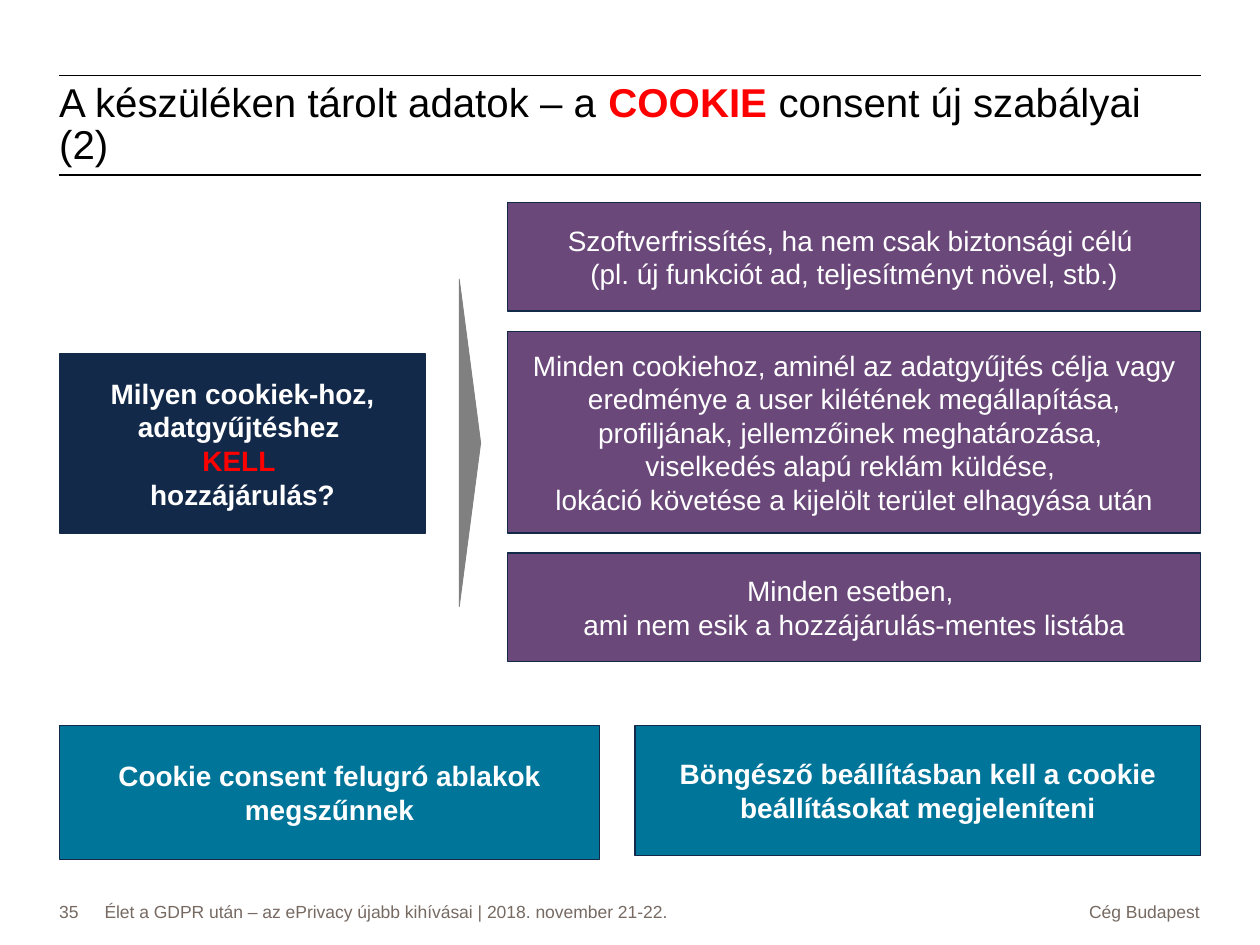
from dataclasses import dataclass

from lxml.etree import SubElement
from pptx import Presentation
from pptx.dml.color import RGBColor as Rgb
from pptx.enum.shapes import MSO_CONNECTOR as Conn, MSO_SHAPE as Shape
from pptx.enum.text import MSO_ANCHOR as Anchor, PP_ALIGN as Align
from pptx.oxml.ns import qn
from pptx.util import Inches, Pt


@dataclass(frozen=True)
class Theme:
    font: str = "Arial"
    black: str = "000000"
    white: str = "FFFFFF"
    red: str = "FF0000"
    navy: str = "13294A"
    plum: str = "6B487A"
    teal: str = "00759A"
    gray: str = "808080"
    taupe: str = "766A62"
    head: float = 23
    lead: float = 24
    body: float = 16
    foot: float = 10


class Deck:
    def __init__(self, theme):
        self.theme = theme
        self.prs = Presentation()
        self.prs.slide_width, self.prs.slide_height = Inches(10), Inches(7.5)
        self.slide = self.prs.slides.add_slide(self.prs.slide_layouts[6])

    def fill_text(self, frame, paras, size, color, bold=False, align=Align.LEFT, lead=None):
        """Fill a frame; each paragraph is a list of (text, own format) runs."""
        frame.word_wrap = True
        for i, runs in enumerate(paras):
            para = frame.paragraphs[0] if i == 0 else frame.add_paragraph()
            para.alignment = align
            if lead:
                para.line_spacing = Pt(lead)
            for text, own in runs:
                look = {"name": self.theme.font, "size": Pt(size), "bold": bold, "color": color} | own
                for j, line in enumerate(text.split("\n")):
                    if j:
                        para.add_line_break()
                    run = para.add_run()
                    run.text = line
                    run.font.color.rgb = Rgb.from_string(look["color"])
                    for key in ("name", "size", "bold"):
                        setattr(run.font, key, look[key])

    def text(self, at, paras, size, color, anchor=Anchor.TOP, **more):
        frame = self.slide.shapes.add_textbox(*map(Inches, at)).text_frame
        bare = {f"margin_{side}": 0 for side in ("left", "top", "right", "bottom")}
        for key, val in (bare | {"vertical_anchor": anchor}).items():
            setattr(frame, key, val)
        self.fill_text(frame, paras, size, color, **more)

    def shape(self, kind, at, fill, line, width):
        item = self.slide.shapes.add_shape(kind, *map(Inches, at))
        item.shadow.inherit = False
        item.fill.solid()
        item.fill.fore_color.rgb = Rgb.from_string(fill)
        item.line.color.rgb = Rgb.from_string(line)
        item.line.width = Pt(width)
        return item

    def box(self, at, fill, paras, bold=False):
        frame = self.shape(Shape.RECTANGLE, at, fill, self.theme.navy, 0.75).text_frame
        frame.vertical_anchor = Anchor.MIDDLE
        self.fill_text(frame, paras, self.theme.body, self.theme.white, bold, Align.CENTER)

    def arrow(self, at):
        """Draw a flat arrow that points right."""
        item = self.shape(Shape.DOWN_ARROW, at, self.theme.gray, self.theme.gray, 0.5)
        item.rotation = 270
        item.adjustments[0], item.adjustments[1] = 0.44, 1

    def rule(self, left, right, y):
        ends = map(Inches, (left, y, right, y))
        item = self.slide.shapes.add_connector(Conn.STRAIGHT, *ends)
        item.line.color.rgb = Rgb.from_string(self.theme.black)
        item.line.width = Pt(1)
        SubElement(item._element.spPr, qn("a:effectLst"))


def main():
    theme = Theme()
    deck = Deck(theme)
    left, right = 0.47, 9.53
    top, base = 0.6, 1.39

    for y in (top, base):
        deck.rule(left, right, y)
    title = [
        ("A készüléken tárolt adatok – a ", {}),
        ("COOKIE ", {"color": theme.red, "bold": True}),
        ("consent új szabályai (2)", {}),
    ]
    deck.text((left, top, right - left, base - top), [title], theme.head, theme.black,
              anchor=Anchor.MIDDLE, lead=theme.lead)

    ask = [
        [("Milyen cookiek-hoz, adatgyűjtéshez ", {})],
        [("KELL ", {"color": theme.red})],
        [("hozzájárulás?", {})],
    ]
    deck.box((left, 2.81, 2.91, 1.42), theme.navy, ask, bold=True)
    deck.arrow((2.43, 3.43, 2.6, 0.17))

    cases = [
        (0.86, "Szoftverfrissítés, ha nem csak biztonsági célú \n"
               "(pl. új funkciót ad, teljesítményt növel, stb.)"),
        (1.6, "Minden cookiehoz, aminél az adatgyűjtés célja vagy eredménye a user "
              "kilétének megállapítása, profiljának, jellemzőinek meghatározása, \n"
              "viselkedés alapú reklám küldése, \n"
              "lokáció követése a kijelölt terület elhagyása után"),
        (0.86, "Minden esetben, \nami nem esik a hozzájárulás-mentes listába"),
    ]
    y, gap, wide = 1.61, 0.16, 5.5
    for high, text in cases:
        deck.box((right - wide, y, wide, high), theme.plum, [[(text, {})]])
        y += high + gap

    ends = [
        (left, 4.29, 1.06, "Cookie consent felugró ablakok megszűnnek"),
        (5.04, 4.49, 1.03, "Böngésző beállításban kell a cookie beállításokat megjeleníteni"),
    ]
    for x, wide, high, text in ends:
        deck.box((x, 5.76, wide, high), theme.teal, [[(text, {})]], bold=True)

    feet = [
        (left, 0.35, Align.LEFT, "35"),
        (0.83, 4.87, Align.LEFT,
         "Élet a GDPR után – az ePrivacy újabb kihívásai | 2018. november 21-22."),
        (5, 4.52, Align.RIGHT, "Cég Budapest"),
    ]
    for x, wide, align, text in feet:
        deck.text((x, 7.15, wide, 0.28), [[(text, {})]], theme.foot, theme.taupe, align=align)

    deck.prs.save("out.pptx")


if __name__ == "__main__":
    main()
